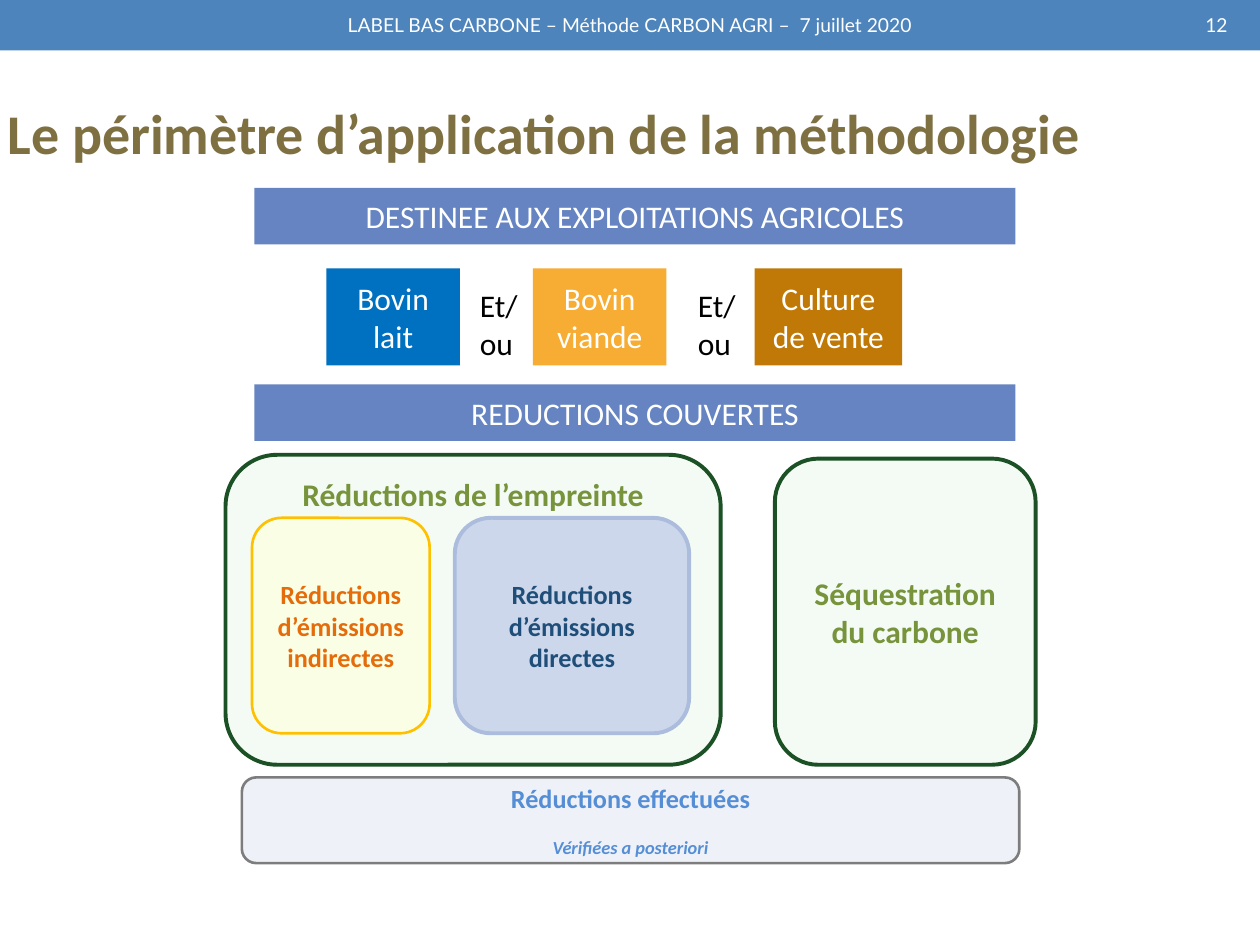
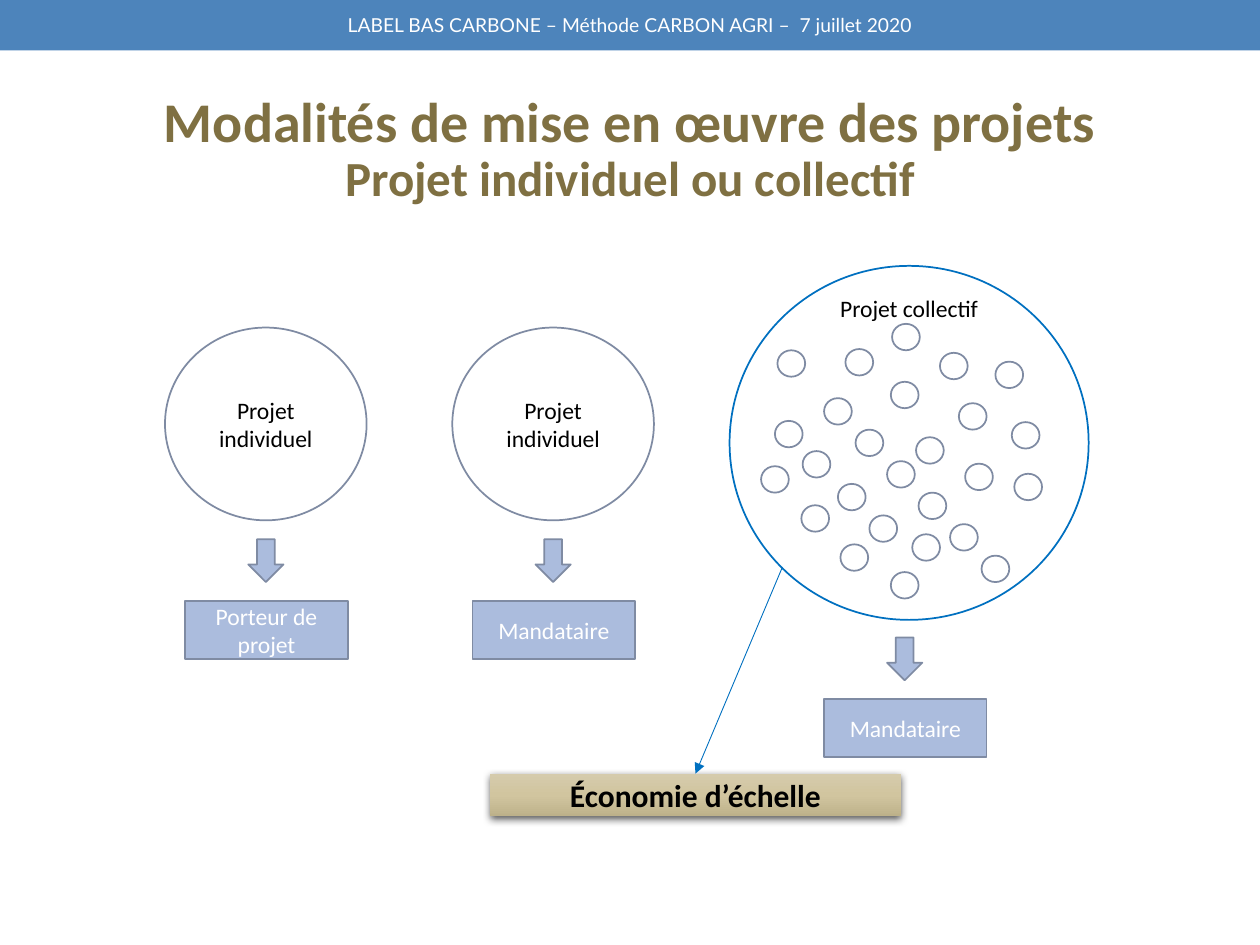
"""Build two slides on the scope and the delivery of a low-carbon farming method."""
import copy

import lxml.etree
import pptx
import pptx.dml.color
import pptx.enum.shapes
import pptx.enum.text
import pptx.oxml
import pptx.oxml.ns
import pptx.util

Inches = pptx.util.Inches
Pt = pptx.util.Pt
RGBColor = pptx.dml.color.RGBColor
Shape = pptx.enum.shapes.MSO_SHAPE
Align = pptx.enum.text.PP_ALIGN
Anchor = pptx.enum.text.MSO_ANCHOR
qn = pptx.oxml.ns.qn

WHITE = RGBColor(0xFF, 0xFF, 0xFF)
BLACK = RGBColor(0x00, 0x00, 0x00)
BAND_BLUE = RGBColor(0x4D, 0x84, 0xBB)
TITLE_BROWN = RGBColor(0x7F, 0x70, 0x42)
HEADING_BLUE = RGBColor(0x65, 0x84, 0xC1)
BRIGHT_BLUE = RGBColor(0x00, 0x70, 0xC0)
ORANGE = RGBColor(0xF7, 0xAC, 0x33)
OCHRE = RGBColor(0xC0, 0x79, 0x07)
PALE_GREEN = RGBColor(0xF4, 0xFB, 0xF5)
DARK_GREEN = RGBColor(0x1B, 0x51, 0x25)
TEXT_GREEN = RGBColor(0x77, 0x93, 0x3C)
PALE_YELLOW = RGBColor(0xF9, 0xFE, 0xE4)
YELLOW = RGBColor(0xFF, 0xC0, 0x00)
TEXT_ORANGE = RGBColor(0xE4, 0x6C, 0x0A)
PALE_BLUE = RGBColor(0xCD, 0xD7, 0xEB)
SOFT_BLUE = RGBColor(0xAB, 0xBC, 0xDD)
NAVY = RGBColor(0x1F, 0x4E, 0x79)
PALE_GREY = RGBColor(0xEE, 0xF2, 0xF8)
GREY = RGBColor(0x7D, 0x7D, 0x7D)
TEXT_BLUE = RGBColor(0x55, 0x8E, 0xD5)
SLATE = RGBColor(0x7F, 0x8B, 0xA3)
SAND_STOPS = ((0, RGBColor(0xD5, 0xCB, 0xAC)), (0.5, RGBColor(0xD1, 0xC5, 0x9F)),
              (1, RGBColor(0xBD, 0xB1, 0x8A)))

HEADER_TEXT = "LABEL BAS CARBONE – Méthode CARBON AGRI –  7 juillet 2020"
HEADER_HEIGHT = 0.4
CARD_INSETS = (0.07, 0.04)
DOT_DIAGONAL = [(0.75 + 0.25 * step, 1.05 + 0.25 * step) for step in range(6)]
DOT_SCATTER = [
    (0.38, 0.67), (0.92, 0.66), (0.36, 1.23), (1.28, 0.92), (1.67, 0.69),
    (1.82, 1.09), (2.11, 0.76), (1.48, 1.36), (2.24, 1.24), (1.87, 1.57),
    (2.26, 1.65), (0.25, 1.59), (0.58, 1.47), (0.57, 1.9), (0.86, 1.73),
    (0.88, 2.21), (1.11, 1.98), (1.45, 2.13), (1.28, 2.43), (1.29, 0.46),
]


def add_text(paragraph, text, size=18, color=WHITE, bold=False, italic=False,
             font="Calibri", align=Align.CENTER, before=0, spacing=None):
    """Add one formatted run to a paragraph."""
    paragraph.alignment = align
    if before:
        paragraph.space_before = Pt(before)
    if spacing:
        paragraph.line_spacing = spacing
    run = paragraph.add_run()
    run.text = text
    run.font.name, run.font.size = font, Pt(size)
    run.font.bold, run.font.italic = bold, italic
    run.font.color.rgb = color


def set_frame(shape, anchor=Anchor.MIDDLE, insets=(0.1, 0.05), wrap=True):
    """Set the wrapping, anchor and insets of a text frame and return it."""
    frame = shape.text_frame
    frame.auto_size = pptx.enum.text.MSO_AUTO_SIZE.NONE
    frame.word_wrap, frame.vertical_anchor = wrap, anchor
    frame.margin_left = frame.margin_right = Inches(insets[0])
    frame.margin_top = frame.margin_bottom = Inches(insets[1])
    return frame


def add_box(shapes, kind, box, fill=None, line=None, width=1, text=None,
            anchor=Anchor.MIDDLE, insets=(0.1, 0.05), **text_format):
    """Add a preset shape with its fill, outline and optional text."""
    shape = shapes.add_shape(kind, *map(Inches, box))
    shape.shadow.inherit = False
    if fill is None:
        shape.fill.background()
    else:
        shape.fill.solid()
        shape.fill.fore_color.rgb = fill
    if line is None:
        shape.line.fill.background()
    else:
        shape.line.color.rgb = line
        shape.line.width = Pt(width)
    if text:
        frame = set_frame(shape, anchor, insets)
        add_text(frame.paragraphs[0], text, **text_format)
    return shape


def add_label(shapes, box, text, anchor=Anchor.TOP, wrap=True, **text_format):
    """Add a text box holding one paragraph."""
    label = shapes.add_textbox(*map(Inches, box))
    frame = set_frame(label, anchor, wrap=wrap)
    add_text(frame.paragraphs[0], text, **text_format)


def add_header(slide, number=None):
    """Add the top band with its running text and optional slide number."""
    add_box(slide.shapes, Shape.RECTANGLE, (0, 0, 10, HEADER_HEIGHT), BAND_BLUE)
    style = {"size": 11, "font": "Lato", "anchor": Anchor.MIDDLE}
    add_label(slide.shapes, (0.69, 0, 8.62, HEADER_HEIGHT), HEADER_TEXT, **style)
    if number:
        add_label(slide.shapes, (9.31, 0, 0.69, HEADER_HEIGHT), number, **style)


def add_title(slide, box, text, subtitle=None, align=Align.CENTER):
    """Move and format the title placeholder, with an optional second line."""
    title = slide.shapes.title
    title.left, title.top, title.width, title.height = map(Inches, box)
    paragraph = set_frame(title).paragraphs[0]
    style = {"color": TITLE_BROWN, "bold": True, "align": align, "spacing": 0.9}
    add_text(paragraph, text, size=32, **style)
    if subtitle:
        paragraph.add_line_break()
        add_text(paragraph, subtitle, size=28, **style)


def add_farm_types(slide, left, top):
    """Add the row of farm types joined by and/or labels."""
    farms = ((0, 1.06, BRIGHT_BLUE, "Bovin lait"), (1.64, 1.06, ORANGE, "Bovin viande"),
             (3.4, 1.17, OCHRE, "Culture de vente"))
    for offset, width, color, text in farms:
        add_box(slide.shapes, Shape.RECTANGLE, (left + offset, top, width, 0.77),
                color, text=text)
    for offset in (1.12, 2.85):
        add_label(slide.shapes, (left + offset, top + 0.09, 0.56, 0.71), "Et/ou",
                  color=BLACK, align=Align.LEFT)


def add_reductions(slide, left, top):
    """Add the footprint, sequestration and achieved-reduction cards."""
    def add_card(box, fill, line, width, text, color, size=15, **options):
        """Add a rounded card at an offset from the region corner."""
        x, y, *extent = box
        return add_box(slide.shapes, Shape.ROUNDED_RECTANGLE, (left + x, top + y, *extent),
                       fill, line, width, text, insets=CARD_INSETS,
                       size=size, color=color, bold=True, **options)

    green = (PALE_GREEN, DARK_GREEN, 2.25)
    add_card((0, 0, 3.93, 2.46), *green, "Réductions de l’empreinte", TEXT_GREEN, 18,
             anchor=Anchor.TOP)
    add_card((0.21, 0.5, 1.41, 1.71), PALE_YELLOW, YELLOW, 1.5,
             "Réductions d’émissions indirectes", TEXT_ORANGE)
    add_card((1.82, 0.5, 1.86, 1.71), PALE_BLUE, SOFT_BLUE, 2.25,
             "Réductions d’émissions directes", NAVY)
    add_card((4.36, 0.03, 2.07, 2.43), *green, "Séquestration du carbone", TEXT_GREEN, 18)
    achieved = add_card((0.13, 2.56, 6.17, 0.68), PALE_GREY, GREY, 1.5,
                        "Réductions effectuées", TEXT_BLUE)
    add_text(achieved.text_frame.add_paragraph(), "Vérifiées a posteriori", size=10.5,
             color=TEXT_BLUE, bold=True, italic=True, before=12.8)


def add_holder(slide, center, top, text):
    """Add a down arrow leading to the box of the party in charge."""
    add_box(slide.shapes, Shape.DOWN_ARROW, (center - 0.14, top, 0.28, 0.34),
            SOFT_BLUE, SLATE)
    add_box(slide.shapes, Shape.RECTANGLE, (center - 0.64, top + 0.49, 1.29, 0.46),
            SOFT_BLUE, SLATE, text=text, size=13.5)


def add_single_project(slide, left, top, holder):
    """Add an individual project circle and its holder."""
    add_box(slide.shapes, Shape.OVAL, (left, top, 1.6, 1.53), line=SLATE,
            text="Projet individuel", size=13.5, color=BLACK)
    add_holder(slide, left + 0.8, top + 1.68, holder)


def add_collective_project(slide, left, top):
    """Add the collective circle, its member dots and its holder."""
    shapes = slide.shapes.add_group_shape().shapes
    add_box(shapes, Shape.OVAL, (left, top, 2.85, 2.81), line=BRIGHT_BLUE)
    add_label(shapes, (left + 0.77, top + 0.17, 1.31, 0.33), "Projet collectif",
              wrap=False, size=13.5, color=BLACK)
    for x, y in DOT_DIAGONAL + DOT_SCATTER:
        add_box(shapes, Shape.OVAL, (left + x, top + y, 0.22, 0.21), line=SLATE)
    add_holder(slide, left + 1.39, top + 2.95, "Mandataire")


def add_scale_benefit(slide, left, top, origin):
    """Add the shaded benefit bar and the arrow pointing to it."""
    bar = add_box(slide.shapes, Shape.RECTANGLE, (left, top, 3.26, 0.34),
                  text="Économie d’échelle", color=BLACK, bold=True)
    bar.fill.gradient()
    bar.fill.gradient_angle = 270
    properties = bar._element.spPr
    stop_list = properties.find(".//" + qn("a:gsLst"))
    stop_list.append(copy.deepcopy(stop_list[0]))
    for stop, (position, color) in zip(bar.fill.gradient_stops, SAND_STOPS):
        stop.position = position
        stop.color.rgb = color
    shadow = lxml.etree.SubElement(
        properties.find(qn("a:effectLst")), qn("a:outerShdw"), blurRad=str(Pt(4.5)),
        dist=str(Pt(1.5)), dir="5400000", rotWithShape="0")
    shade = lxml.etree.SubElement(shadow, qn("a:srgbClr"), val=str(BLACK))
    lxml.etree.SubElement(shade, qn("a:alpha"), val="63000")

    arrow = slide.shapes.add_connector(
        pptx.enum.shapes.MSO_CONNECTOR.STRAIGHT, *map(Inches, (*origin, left + 1.63, top)))
    arrow.line.color.rgb = BRIGHT_BLUE
    arrow.line.width = Pt(0.5)
    lxml.etree.SubElement(arrow.line._get_or_add_ln(), qn("a:tailEnd"), type="triangle")
    lxml.etree.SubElement(arrow._element.spPr, qn("a:effectLst"))


def build_scope_slide(slide):
    """Build the slide on the scope of the method."""
    add_header(slide, "12")
    add_title(slide, (-0.04, 0.49, 10.07, 1.18),
              "Le périmètre d’application de la méthodologie", align=Align.LEFT)
    for top, text in ((1.49, "DESTINEE AUX EXPLOITATIONS AGRICOLES"),
                      (3.05, "REDUCTIONS COUVERTES")):
        add_box(slide.shapes, Shape.RECTANGLE, (2.02, top, 6.04, 0.45),
                HEADING_BLUE, text=text)
    add_farm_types(slide, 2.59, 2.13)
    add_reductions(slide, 1.79, 3.61)


def build_projects_slide(slide):
    """Build the slide on individual and collective projects."""
    add_header(slide)
    add_title(slide, (0.69, 0.47, 8.62, 1.45), "Modalités de mise en œuvre des projets",
              "Projet individuel ou collectif")
    add_single_project(slide, 1.31, 2.6, "Porteur de projet")
    add_single_project(slide, 3.59, 2.6, "Mandataire")
    add_collective_project(slide, 5.79, 2.11)
    add_scale_benefit(slide, 3.89, 6.14, (6.21, 4.5))


def main():
    """Create the presentation and save it."""
    presentation = pptx.Presentation()
    presentation.slide_width, presentation.slide_height = Inches(10), Inches(7.5)
    title_only = presentation.slide_layouts[5]
    for build in (build_scope_slide, build_projects_slide):
        build(presentation.slides.add_slide(title_only))
    presentation.save("out.pptx")


if __name__ == "__main__":
    main()
